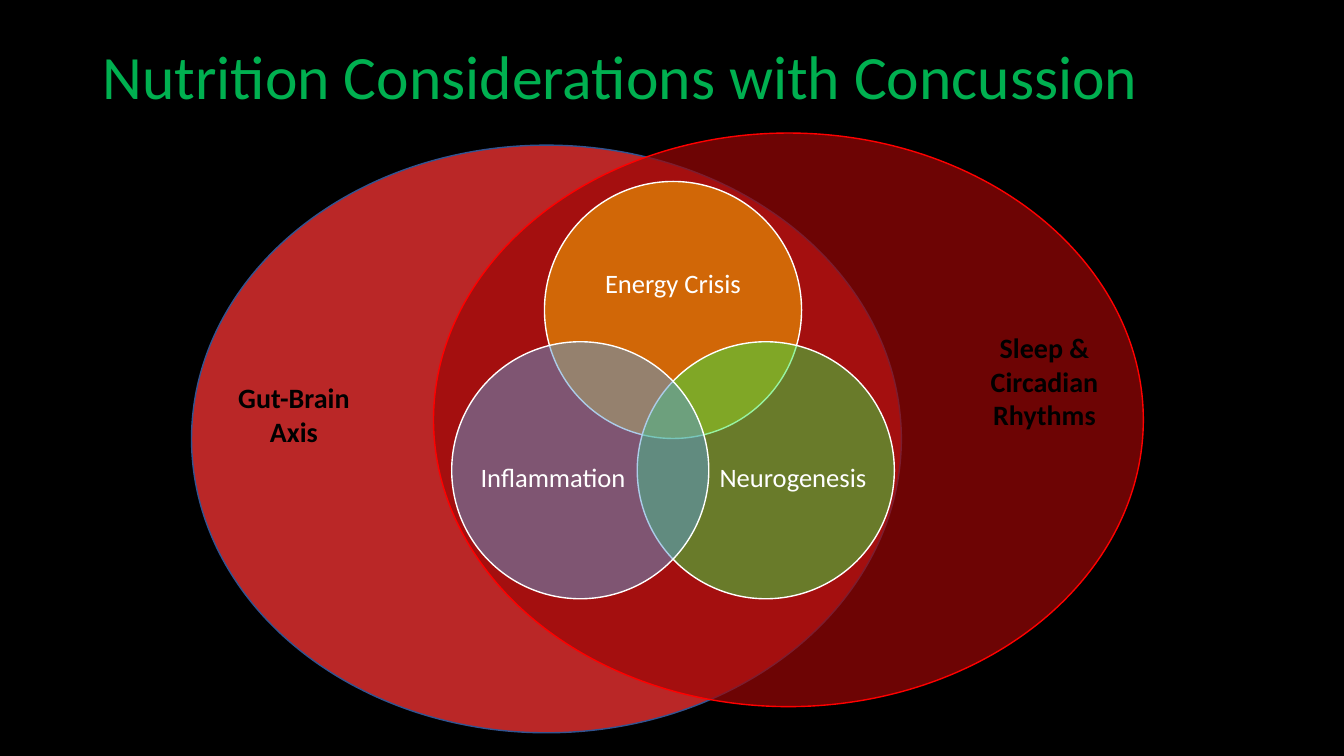
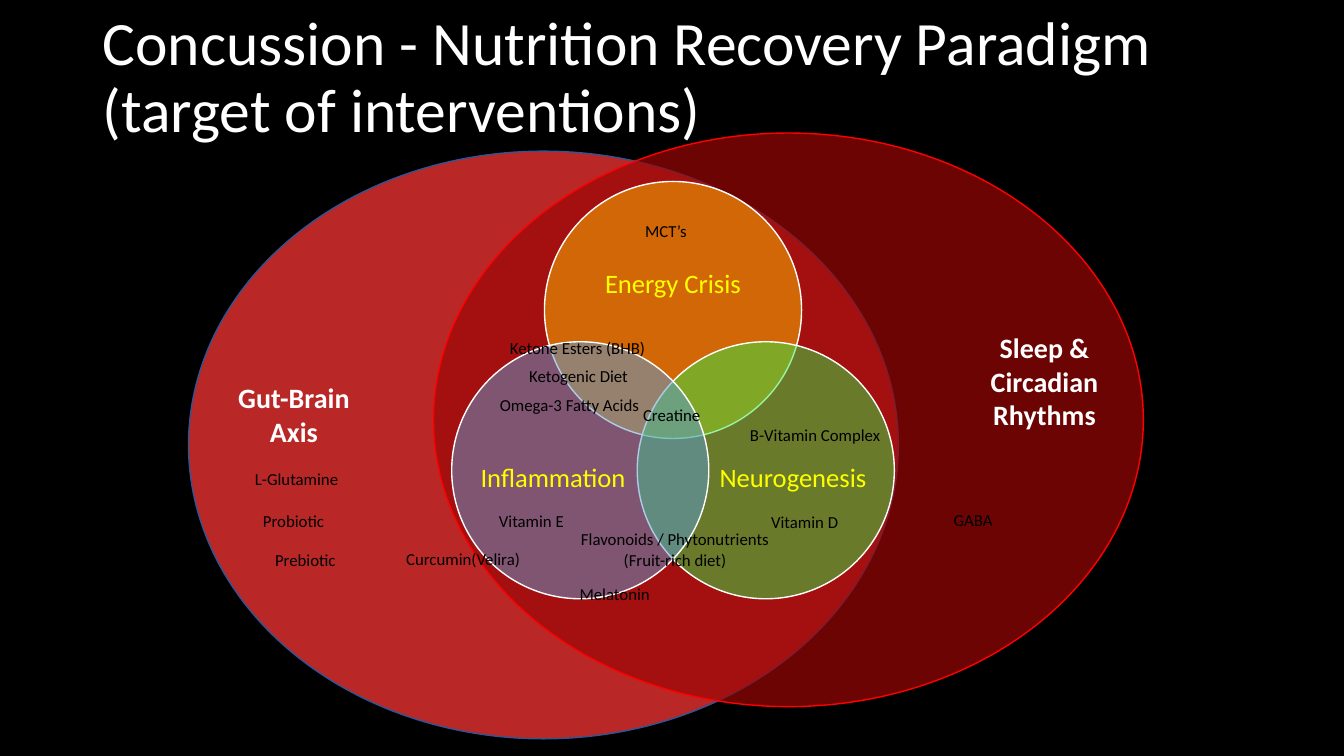
"""Build two Venn slides on nutrition and concussion."""
from lxml import etree
from pptx import Presentation
from pptx import util as u
from pptx.dml.color import RGBColor
from pptx.enum import shapes, text
from pptx.oxml import ns

PX = 9144
FONT = "Calibri"
BLACK = RGBColor(0x00, 0x00, 0x00)
WHITE = RGBColor(0xFF, 0xFF, 0xFF)
GREEN = RGBColor(0x00, 0xB0, 0x50)
YELLOW = RGBColor(0xFF, 0xFF, 0x00)
BRICK = RGBColor(0xBA, 0x27, 0x27)
NAVY = RGBColor(0x32, 0x54, 0x91)
MAROON = RGBColor(0x9C, 0x06, 0x06)
RED = RGBColor(0xFF, 0x00, 0x00)
AMBER = RGBColor(0xFF, 0xC0, 0x00)
LIME = RGBColor(0x30, 0xE8, 0x45)
BLUE = RGBColor(0x5B, 0x9B, 0xD5)

MID = text.MSO_ANCHOR.MIDDLE
TOP = text.MSO_ANCHOR.TOP
LEFT = text.PP_ALIGN.LEFT
CENTER = text.PP_ALIGN.CENTER


def oval(parent, box, fill, line, alpha=100):
    """Add an ellipse whose fill has the given opacity in percent."""
    shape = parent.add_shape(shapes.MSO_SHAPE.OVAL, *[v * PX for v in box])
    shape.shadow.inherit = False
    shape.fill.solid()
    shape.fill.fore_color.rgb = fill
    shape.line.color.rgb = line
    shape.line.width = u.Pt(1)
    if alpha < 100:
        color = shape.element.spPr.find(ns.qn("a:solidFill"))[0]
        etree.SubElement(color, ns.qn("a:alpha"), val=str(alpha * 1000))


def label(parent, box, words, size, color, align=LEFT, anchor=TOP,
          bold=False, space=1.0, inset=True):
    """Add a wrapped text box with one paragraph per line of words."""
    frame = parent.add_textbox(*[v * PX for v in box]).text_frame
    frame.word_wrap = True
    frame.vertical_anchor = anchor
    if not inset:
        frame.margin_left = frame.margin_right = 0
        frame.margin_top = frame.margin_bottom = 0
    frame.text = words
    for para in frame.paragraphs:
        para.alignment = align
        para.line_spacing = space
        para.font.name = FONT
        para.font.size = u.Pt(size)
        para.font.bold = bold
        para.font.color.rgb = color


SLIDES = [
    ("Nutrition Considerations with Concussion",
     GREEN, WHITE, BLACK, (190, 144)),
    ("Concussion - Nutrition Recovery Paradigm (target of interventions)",
     WHITE, YELLOW, WHITE, (187, 150)),
]
CIRCLES = [
    ((540, 180), AMBER, (574, 225, 187, 115), "Energy Crisis"),
    ((632, 339), LIME, (710, 405, 153, 140), "Neurogenesis"),
    ((448, 339), BLUE, (472, 405, 153, 140), "Inflammation"),
]
SIDES = [
    ((204, 373, 175, 108), "Gut-Brain Axis"),
    ((938, 323, 196, 145), "Sleep & Circadian Rhythms"),
]
NOTES = [
    (628, 397, "Creatine"),
    (565, 574, "Melatonin"),
    (486, 387, "Omega-3 Fatty Acids"),
    (251, 502, "Probiotic"),
    (515, 358, "Ketogenic Diet"),
    (393, 539, "Curcumin(Velira)"),
    (243, 460, "L-Glutamine"),
    (734, 416, "B-Vitamin Complex"),
    (630, 214, "MCT’s"),
    (755, 503, "Vitamin D"),
    (485, 502, "Vitamin E"),
    (263, 540, "Prebiotic"),
    (936, 501, "GABA"),
    (496, 330, "Ketone Esters (BHB)"),
]

deck = Presentation()
deck.slide_width = u.Inches(13.33)
deck.slide_height = u.Inches(7.5)

for title, head, inner, outer, gut in SLIDES:
    slide = deck.slides.add_slide(deck.slide_layouts[6])
    slide.background.fill.solid()
    slide.background.fill.fore_color.rgb = BLACK
    tree = slide.shapes
    label(tree, (92, 6, 1150, 145), title, 44, head, anchor=MID, space=0.9)
    oval(tree, (*gut, 704, 583), BRICK, NAVY)
    oval(tree, (430, 132, 704, 569), MAROON, RED, 70)
    venn = tree.add_group_shape().shapes
    for spot, fill, box, name in CIRCLES:
        oval(venn, (*spot, 255, 255), fill, WHITE, 50)
        label(venn, box, name, 19, inner, CENTER, MID, space=0.9, inset=False)
    for box, name in SIDES:
        label(tree, box, name, 20, outer, CENTER, bold=True)

label(tree, (517, 520, 305, 50),
      "Flavonoids / Phytonutrients\n(Fruit-rich diet)", 12, BLACK, CENTER)
for left, top, name in NOTES:
    label(tree, (left, top, 200, 30), name, 12, BLACK)

deck.save("out.pptx")
